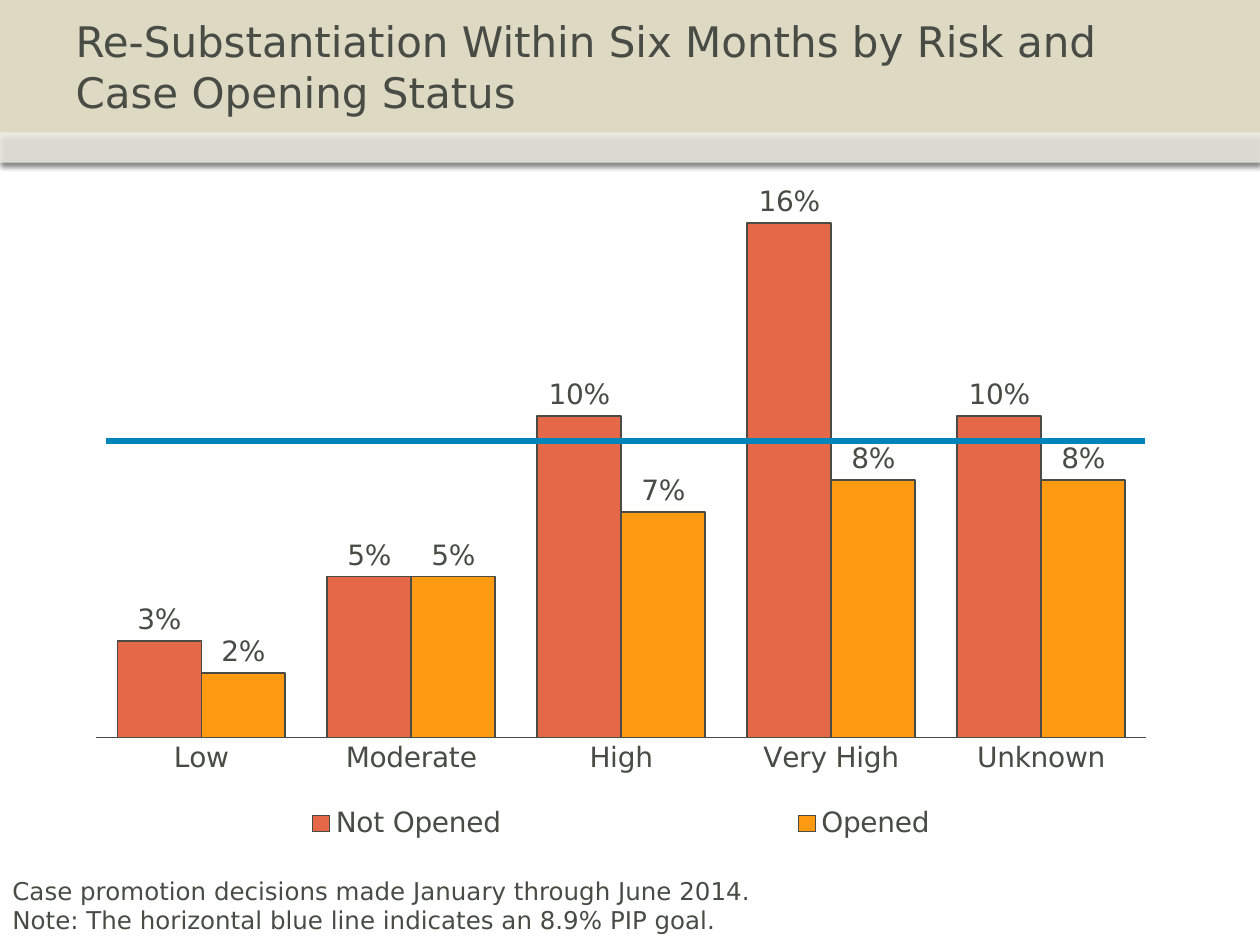
from lxml.etree import SubElement as Sub
from pptx import Presentation
from pptx.chart.data import CategoryChartData as Data
from pptx.dml.color import RGBColor as RGB
from pptx.enum.chart import XL_CHART_TYPE as Kind, XL_LABEL_POSITION as Spot
from pptx.enum.chart import XL_LEGEND_POSITION as Side, XL_TICK_LABEL_POSITION as Place
from pptx.enum.chart import XL_TICK_MARK as Tick
from pptx.enum.shapes import MSO_CONNECTOR as Link, MSO_SHAPE as Form
from pptx.enum.text import MSO_ANCHOR as Anchor, PP_ALIGN as Align
from pptx.oxml.ns import qn
from pptx.util import Cm, Pt

INK = RGB(0x48, 0x4C, 0x45)
SAND = RGB(0xDD, 0xD9, 0xC3)
WHITE = RGB(0xFF, 0xFF, 0xFF)
RED = RGB(0xE5, 0x68, 0x49)
GOLD = RGB(0xFF, 0x9A, 0x12)
BLUE = RGB(0x00, 0x85, 0xBA)
FACE = "DejaVu Sans"


class Deck:
    """Hold the style and the current slide."""

    def __init__(self):
        self.show = Presentation()
        self.show.slide_width, self.show.slide_height = Cm(25.4), Cm(19.05)
        self.slide = self.show.slides.add_slide(self.show.slide_layouts[5])
        self.shapes = self.slide.shapes

    def style(self, font, size):
        font.name, font.size, font.bold = FACE, Pt(size), False
        font.color.rgb = INK

    def band(self, top, high, color, alpha=100):
        box = self.shapes.add_shape(Form.RECTANGLE, 0, Cm(top), Cm(25.4), Cm(high))
        box.fill.solid()
        box.fill.fore_color.rgb = color
        box.line.fill.background()
        box.shadow.inherit = False
        props = box._element.spPr
        tint = props.find(qn("a:solidFill"))[0]
        Sub(tint, qn("a:alpha"), val=str(alpha * 1000))
        glow = Sub(props.find(qn("a:effectLst")), qn("a:outerShdw"), blurRad=str(Pt(3.1)),
                   dist=str(Pt(1.8)), dir="5400000", rotWithShape="0")
        dark = Sub(glow, qn("a:srgbClr"), val="000000")
        Sub(dark, qn("a:alpha"), val="35000")

    def title(self, text):
        head = self.shapes.title
        self.shapes._spTree.append(head._element)
        head.left, head.top, head.width, head.height = Cm(1.27), 0, Cm(22.86), Cm(2.67)
        frame = head.text_frame
        frame.text = text
        frame.vertical_anchor = Anchor.MIDDLE
        frame.paragraphs[0].alignment = Align.LEFT
        self.style(frame.paragraphs[0].runs[0].font, 24)

    def layout(self, area, x, y, w, h, inner=False):
        node = area.get_or_add_layout() if hasattr(area, "get_or_add_layout") else area.find(qn("c:layout"))
        if node is None:
            node = area.makeelement(qn("c:layout"))
            area.insert(0, node)
        for old in list(node):
            node.remove(old)
        hand = Sub(node, qn("c:manualLayout"))
        if inner:
            Sub(hand, qn("c:layoutTarget"), val="inner")
        for key in ("xMode", "yMode"):
            Sub(hand, qn("c:" + key), val="edge")
        for key, val in zip("xywh", (x, y, w, h)):
            Sub(hand, qn("c:" + key), val=str(val))

    def chart(self, cats, rows):
        data = Data(number_format="0%")
        data.categories = cats
        for name, vals, _ in rows:
            data.add_series(name, vals)
        chart = self.shapes.add_chart(Kind.COLUMN_CLUSTERED, Cm(0.5), Cm(3.66),
                                      Cm(24.05), Cm(13.84), data).chart
        self.style(chart.font, 16)
        chart.has_title = False
        plot = chart.plots[0]
        plot.gap_width, plot.overlap, plot.vary_by_categories = 50, 0, False
        for bars, (_, _, color) in zip(plot.series, rows):
            bars.format.fill.solid()
            bars.format.fill.fore_color.rgb = color
            bars.format.line.color.rgb = INK
            bars.format.line.width = Pt(0.97)
            tags = bars.data_labels
            tags.show_value, tags.position = True, Spot.OUTSIDE_END
            tags.number_format, tags.number_format_is_linked = "0%", False
            self.style(tags.font, 16)
        axis = chart.category_axis
        axis.major_tick_mark = Tick.NONE
        axis.format.line.color.rgb = INK
        axis.format.line.width = Pt(0.25)
        self.style(axis.tick_labels.font, 16)
        scale = chart.value_axis
        scale.minimum_scale, scale.maximum_scale, scale.major_unit = 0, 0.16, 0.04
        scale.has_major_gridlines = scale.visible = False
        scale.tick_label_position = Place.NONE
        chart.has_legend = True
        key = chart.legend
        key.position, key.include_in_layout = Side.BOTTOM, False
        self.style(key.font, 16)
        self.layout(chart._chartSpace.chart.plotArea, 0.06, 0.06, 0.88, 0.75, True)
        pos = key._element.find(qn("c:legendPos"))
        spot = key._element.find(qn("c:layout"))
        if spot is None:
            spot = key._element.makeelement(qn("c:layout"))
        pos.addnext(spot)
        self.layout(key._element, 0, 0.9, 1, 0.07)

    def line(self, left, right, top):
        rule = self.shapes.add_connector(Link.STRAIGHT, Cm(left), Cm(top), Cm(right), Cm(top))
        rule.line.color.rgb = BLUE
        rule.line.width = Pt(3)
        Sub(rule._element.spPr, qn("a:effectLst"))

    def note(self, text):
        frame = self.shapes.add_textbox(0, Cm(17.53), Cm(24.46), Cm(1.45)).text_frame
        frame.word_wrap = True
        frame.text = text
        for para in frame.paragraphs:
            self.style(para.runs[0].font, 14)


def main():
    deck = Deck()
    deck.band(0, 3.28, SAND)
    deck.band(2.67, 0.61, WHITE, 53)
    deck.title("Re-Substantiation Within Six Months by Risk and Case Opening Status")
    deck.chart(["Low", "Moderate", "High", "Very High", "Unknown"],
               [("Not Opened", (0.03, 0.05, 0.1, 0.16, 0.1), RED),
                ("Opened", (0.02, 0.05, 0.07, 0.08, 0.08), GOLD)])
    deck.line(2.13, 23.09, 8.89)
    deck.note("Case promotion decisions made January through June 2014.\n"
              "Note: The horizontal blue line indicates an 8.9% PIP goal.")
    deck.show.save("out.pptx")


if __name__ == "__main__":
    main()
